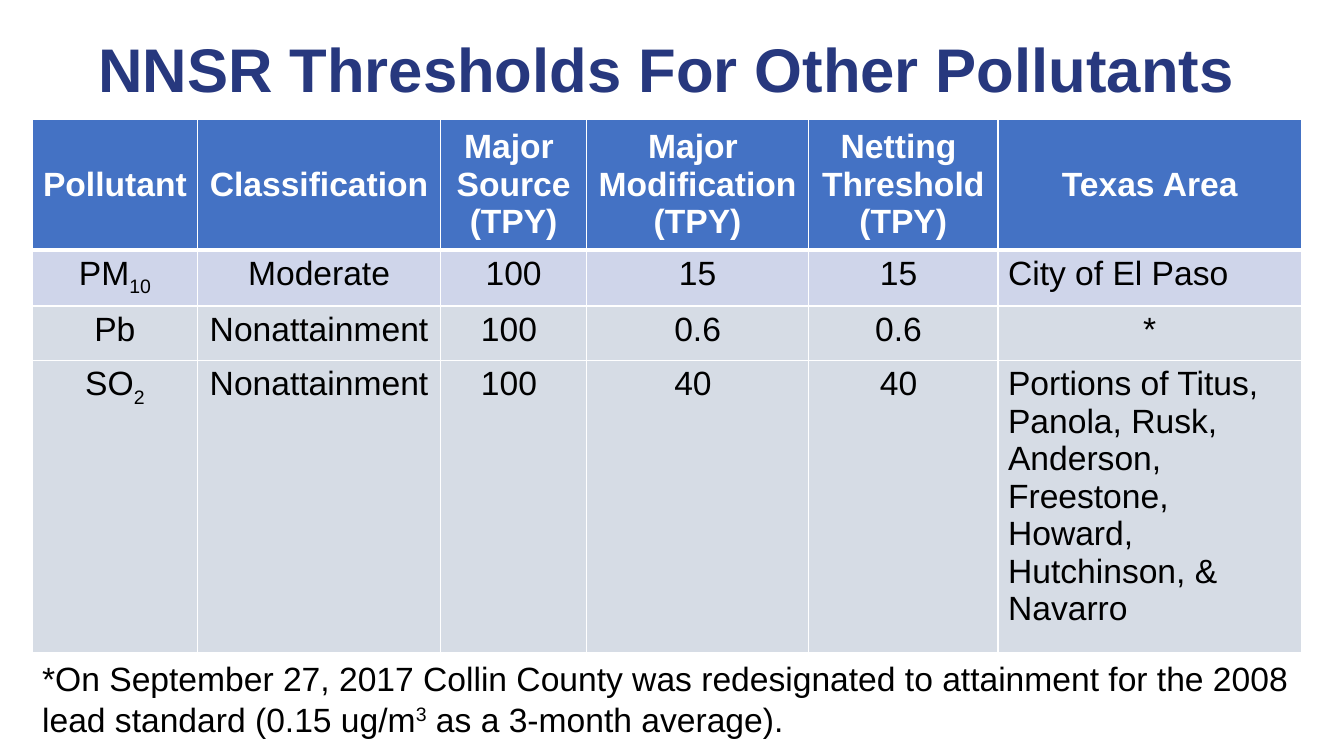
from dataclasses import dataclass

from lxml.etree import SubElement
from pptx import Presentation
from pptx.dml.color import RGBColor
from pptx.enum.text import MSO_ANCHOR as Anchor, PP_ALIGN as Align
from pptx.oxml.ns import qn
from pptx.util import Inches, Pt

SLIDE_WIDTH, SLIDE_HEIGHT = Inches(13.33), Inches(7.5)
WHITE, BLACK, NAVY = "FFFFFF", "000000", "27387E"
HEADER_BLUE, LAVENDER, PALE_GREY = "4472C4", "CFD5EA", "D6DCE5"


@dataclass(frozen=True)
class Run:
    text: str
    baseline: int = 0  # percent; negative is subscript


@dataclass(frozen=True)
class Style:
    color: str
    size: int = 24
    bold: bool = False
    align: Align = Align.LEFT
    line_spacing: float = 1.0


@dataclass(frozen=True)
class Area:
    """Left, top, width and height as percentages of the slide."""
    left: float
    top: float
    width: float
    height: float


@dataclass(frozen=True)
class TableRow:
    height: float
    fill: str
    cells: tuple


COLUMN_WIDTHS = (12.3, 18.08, 10.88, 16.5, 14.1, 22.58)
TABLE_ROWS = (
    TableRow(16.13, HEADER_BLUE, (
        "Pollutant ", "Classification", "Major \nSource\n(TPY)",
        "Major \nModification\n(TPY)", "Netting \nThreshold\n(TPY)", "Texas Area")),
    TableRow(7.07, LAVENDER, (
        (Run("PM"), Run("10", -25)), "Moderate", "100", "15", "15 ", "City of El Paso")),
    TableRow(7.2, PALE_GREY, ("Pb", "Nonattainment", "100 ", "0.6", "0.6 ", "*")),
    TableRow(36, PALE_GREY, (
        (Run("SO"), Run("2", -25)), "Nonattainment", "100 ", "40 ", "40 ",
        "Portions of Titus, Panola, Rusk, Anderson, Freestone, Howard, "
        "Hutchinson, & Navarro")),
)
TABLE_AREA = Area(2.4, 15.73, sum(COLUMN_WIDTHS), sum(row.height for row in TABLE_ROWS))
TITLE_AREA = Area(4.65, 4.67, 89.95, 9.73)
FOOTNOTE_AREA = Area(2.4, 86.4, 94.2, 12.13)
FOOTNOTE = (
    Run("*On September 27, 2017 Collin County was redesignated to attainment "
        "for the 2008 lead standard (0.15 ug/m"),
    Run("3", 30),
    Run(" as a 3-month average)."),
)


def across(percent: float) -> int:
    return round(SLIDE_WIDTH * percent / 100)


def down(percent: float) -> int:
    return round(SLIDE_HEIGHT * percent / 100)


def place(area: Area) -> tuple:
    return across(area.left), down(area.top), across(area.width), down(area.height)


def rgb(color: str) -> RGBColor:
    return RGBColor.from_string(color)


def write(frame, content, style: Style) -> None:
    """Write a string, one paragraph a line, or a tuple of runs."""
    lines = [(Run(line),) for line in content.split("\n")] if isinstance(content, str) else [content]
    for index, line in enumerate(lines):
        paragraph = frame.add_paragraph() if index else frame.paragraphs[0]
        paragraph.alignment = style.align
        paragraph.line_spacing = style.line_spacing
        for part in line:
            run = paragraph.add_run()
            run.text = part.text
            font_values = {"name": "Arial", "size": Pt(style.size), "bold": style.bold}
            for name, value in font_values.items():
                setattr(run.font, name, value)
            run.font.color.rgb = rgb(style.color)
            if part.baseline:
                run.font._element.set("baseline", str(part.baseline * 1000))


def add_text(slide, area: Area, content, style: Style, anchor: Anchor) -> None:
    frame = slide.shapes.add_textbox(*place(area)).text_frame
    frame.word_wrap = True
    frame.vertical_anchor = anchor
    write(frame, content, style)


def set_borders(cell, widths: dict) -> None:
    properties = cell._tc.get_or_add_tcPr()
    for position, (side, width) in enumerate(widths.items()):
        line = SubElement(properties, qn(f"a:{side}"), w=str(Pt(width)))
        fill = SubElement(line, qn("a:solidFill"))
        SubElement(fill, qn("a:srgbClr"), val=WHITE)
        properties.insert(position, line)


def add_threshold_table(slide) -> None:
    shape = slide.shapes.add_table(len(TABLE_ROWS), len(COLUMN_WIDTHS), *place(TABLE_AREA))
    table = shape.table
    for column, width in zip(table.columns, COLUMN_WIDTHS):
        column.width = across(width)
    for row_index, row in enumerate(TABLE_ROWS):
        table.rows[row_index].height = down(row.height)
        is_header = row_index == 0
        for column_index, content in enumerate(row.cells):
            cell = table.cell(row_index, column_index)
            cell.fill.solid()
            cell.fill.fore_color.rgb = rgb(row.fill)
            cell.vertical_anchor = Anchor.MIDDLE if is_header else Anchor.TOP
            is_area_name = column_index == 5 and not is_header and content != "*"
            align = Align.LEFT if is_area_name else Align.CENTER
            write(cell.text_frame, content,
                  Style(WHITE if is_header else BLACK, bold=is_header, align=align))
            set_borders(cell, {"lnL": 1, "lnR": 1,
                               "lnT": 3 if row_index == 1 else 1,
                               "lnB": 3 if is_header else 1})


def main() -> None:
    presentation = Presentation()
    presentation.slide_width, presentation.slide_height = SLIDE_WIDTH, SLIDE_HEIGHT
    slide = presentation.slides.add_slide(presentation.slide_layouts[6])
    add_text(slide, TITLE_AREA, "NNSR Thresholds For Other Pollutants",
             Style(NAVY, 44, True, Align.CENTER, 0.9), Anchor.MIDDLE)
    add_threshold_table(slide)
    add_text(slide, FOOTNOTE_AREA, FOOTNOTE, Style(BLACK), Anchor.TOP)
    presentation.save("out.pptx")


if __name__ == "__main__":
    main()
